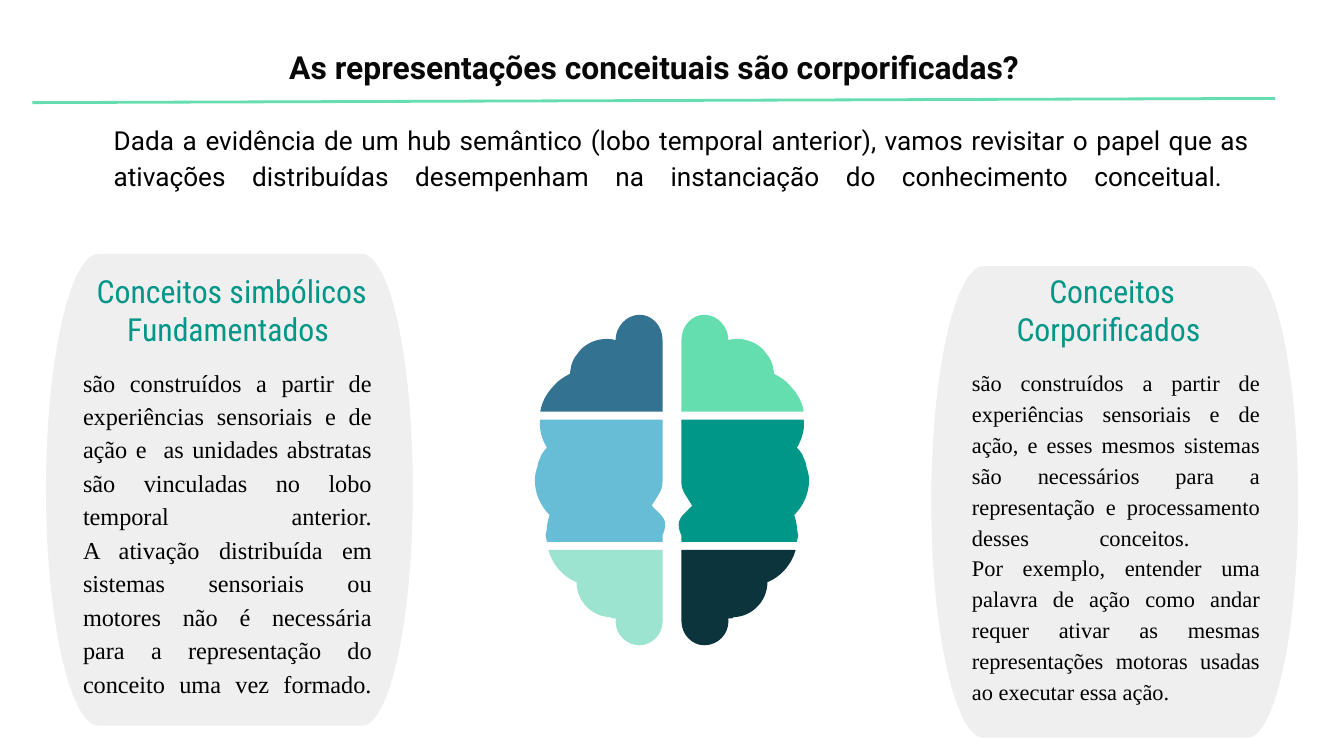
from dataclasses import dataclass

from lxml.etree import SubElement
from pptx import Presentation
from pptx.dml.color import RGBColor
from pptx.enum.shapes import MSO_CONNECTOR
from pptx.enum.text import MSO_ANCHOR, PP_ALIGN
from pptx.oxml.ns import qn
from pptx.slide import Slide
from pptx.util import Cm, Pt

COLORS = {
    "title": "080808",
    "text": "000000",
    "panel": "EFEFEF",
    "teal": "009688",
    "mint": "64DEAE",
    "pale_mint": "9CE4D0",
    "sky": "67BCD6",
    "steel": "337291",
    "night": "0C343D",
}
UNIT = Cm(2.54) / 100

PANEL = (
    (39, 0), (18, 0, 0, 79, 0, 175), (0, 272, 18, 351, 39, 351),
    (235, 351), (256, 351, 273, 272, 273, 175), (273, 79, 256, 0, 235, 0),
)
FRONT_LOBE = (
    (24, 0), (15, 0, 7, 8, 7, 19), (7, 72), (98, 72),
    (97, 65, 93, 58, 88, 53), (85, 49, 80, 46, 76, 44),
    (76, 42, 75, 40, 75, 38), (74, 35, 73, 32, 71, 30),
    (70, 29, 69, 27, 68, 26), (63, 21, 56, 18, 49, 18),
    (47, 18, 44, 18, 42, 19), (42, 9, 34, 0, 24, 0),
)
MIDDLE_LOBE = (
    (7, 78), (7, 124), (7, 128, 8, 131, 10, 134), (15, 142),
    (12, 146, 5, 150, 5, 156), (5, 159, 6, 162, 7, 164), (7, 169), (93, 169),
    (94, 167, 94, 166, 94, 164), (94, 163, 93, 161, 93, 159),
    (93, 156, 92, 152, 91, 149), (98, 142, 102, 133, 102, 123),
    (102, 119, 101, 116, 100, 113), (100, 110, 98, 107, 97, 104),
    (96, 102, 94, 100, 93, 99), (97, 92, 99, 85, 98, 78),
)
REAR_LOBE = (
    (7, 175), (7, 228), (7, 238, 15, 246, 24, 246), (34, 246, 42, 238, 42, 228),
    (42, 226), (44, 226), (44, 226, 45, 226, 46, 225), (47, 225),
    (60, 224, 71, 213, 71, 199), (81, 195, 89, 186, 92, 175),
)


@dataclass(frozen=True)
class Style:
    font: str
    size: int
    color: str
    align: PP_ALIGN = PP_ALIGN.CENTER
    anchor: MSO_ANCHOR = MSO_ANCHOR.MIDDLE
    spacing: float = 1.0
    bold: bool = False
    end_size: int = 0


@dataclass(frozen=True)
class Label:
    left: float
    top: float
    width: float
    height: float
    style: Style
    lines: tuple[str, ...]


@dataclass(frozen=True)
class Outline:
    left: float
    top: float
    segments: tuple[tuple[int, ...], ...]
    color: str
    direction: int = 1


TITLE = Style("Roboto", 17, "title", anchor=MSO_ANCHOR.TOP, bold=True)
INTRO = Style("Roboto", 14, "text", PP_ALIGN.JUSTIFY, spacing=1.15)
HEADING = Style("Roboto Condensed", 17, "teal")
LEFT_BODY = Style("Times New Roman", 13, "text", PP_ALIGN.JUSTIFY,
                  spacing=1.15, end_size=17)
RIGHT_BODY = Style("Times New Roman", 12, "text", PP_ALIGN.JUSTIFY, spacing=1.15)

HEADER = (
    Label(0, 0.65, 24.89, 1.93, TITLE,
          ("As representações conceituais são corporificadas? ",)),
    Label(1.9, 2.57, 21.97, 1.52, INTRO, (
        "Dada a evidência de um hub semântico (lobo temporal anterior), vamos "
        "revisitar o papel que as ativações distribuídas desempenham na "
        "instanciação do conhecimento conceitual. ", "")),
)
LEFT_COLUMN = (
    Outline(0.87, 4.8, PANEL, "panel"),
    Label(1.32, 9.8, 5.95, 1.19, LEFT_BODY, (
        "são construídos a partir de experiências sensoriais e de ação e  as "
        "unidades abstratas são vinculadas no lobo temporal anterior.",
        "A ativação distribuída em sistemas sensoriais ou motores não é "
        "necessária para a representação do conceito uma vez formado.", "")),
    Label(1.55, 5.26, 5.66, 1.19, HEADING,
          ("Conceitos simbólicos Fundamentados ",)),
)
BRAIN = tuple(
    Outline(12.7, 5.95, segments, color, direction)
    for segments, color, direction in (
        (MIDDLE_LOBE, "sky", -1),
        (REAR_LOBE, "pale_mint", -1),
        (FRONT_LOBE, "steel", -1),
        (FRONT_LOBE, "mint", 1),
        (MIDDLE_LOBE, "teal", 1),
        (REAR_LOBE, "night", 1),
    )
)
RIGHT_COLUMN = (
    Outline(17.6, 5.03, PANEL, "panel"),
    Label(18.12, 9.52, 5.95, 1.19, RIGHT_BODY, (
        "são construídos a partir de experiências sensoriais e de ação, e esses "
        "mesmos sistemas são necessários para a representação e processamento "
        "desses conceitos. ",
        "Por exemplo, entender uma palavra de ação como andar requer ativar as "
        "mesmas representações motoras usadas ao executar essa ação.")),
    Label(18.19, 5.26, 5.66, 1.19, HEADING, ("Conceitos Corporificados ",)),
)


def draw_outline(slide: Slide, outline: Outline) -> None:
    def place(x: int, y: int) -> tuple[int, int]:
        return (round(Cm(outline.left) + outline.direction * x * UNIT),
                round(Cm(outline.top) + y * UNIT))

    anchors = [place(*segment[-2:]) for segment in outline.segments]
    builder = slide.shapes.build_freeform(*anchors[0])
    builder.add_line_segments(anchors[1:], close=True)
    shape = builder.convert_to_shape()
    lines = list(shape.element.iter(qn("a:lnTo")))
    for line, segment in zip(lines, outline.segments[1:]):
        if len(segment) == 6:
            line.tag = qn("a:cubicBezTo")
            end = line[0]
            for control in (segment[:2], segment[2:4]):
                x, y = place(*control)
                point = SubElement(line, qn("a:pt"))
                point.set("x", str(x - shape.left))
                point.set("y", str(y - shape.top))
            line.append(end)
    shape.shadow.inherit = False
    shape.fill.solid()
    shape.fill.fore_color.rgb = RGBColor.from_string(COLORS[outline.color])
    shape.line.fill.background()


def draw_label(slide: Slide, label: Label) -> None:
    style = label.style
    box = slide.shapes.add_textbox(
        Cm(label.left), Cm(label.top), Cm(label.width), Cm(label.height))
    frame = box.text_frame
    frame.word_wrap = True
    frame.vertical_anchor = style.anchor
    frame.margin_left = frame.margin_right = Cm(0.25)
    frame.margin_top = frame.margin_bottom = Cm(0.25)
    paragraph = frame.paragraphs[0]
    paragraph.alignment = style.align
    paragraph.line_spacing = style.spacing
    for index, line in enumerate(label.lines):
        if index:
            paragraph.add_line_break()
        if line:
            run = paragraph.add_run()
            run.text = line
            run.font.name = style.font
            run.font.size = Pt(style.size)
            run.font.bold = style.bold
            run.font.color.rgb = RGBColor.from_string(COLORS[style.color])
    if style.end_size:
        element = next(box.element.iter(qn("a:p")))
        ending = SubElement(element, qn("a:endParaRPr"))
        ending.set("sz", str(style.end_size * 100))
        SubElement(ending, qn("a:latin")).set("typeface", style.font)


def draw_title_rule(slide: Slide) -> None:
    rule = slide.shapes.add_connector(
        MSO_CONNECTOR.STRAIGHT, Cm(0.61), Cm(1.94), Cm(24.1), Cm(1.86))
    rule.line.color.rgb = RGBColor.from_string(COLORS["mint"])
    rule.line.width = Pt(1.5)
    SubElement(rule.element.spPr, qn("a:effectLst"))


def main() -> None:
    """Build the slide on embodied conceptual representations."""
    presentation = Presentation()
    presentation.slide_width = Cm(25.4)
    presentation.slide_height = Cm(14.29)
    slide = presentation.slides.add_slide(presentation.slide_layouts[6])
    draw_title_rule(slide)
    for part in HEADER + LEFT_COLUMN + BRAIN + RIGHT_COLUMN:
        if isinstance(part, Label):
            draw_label(slide, part)
        else:
            draw_outline(slide, part)
    presentation.save("out.pptx")


if __name__ == "__main__":
    main()
